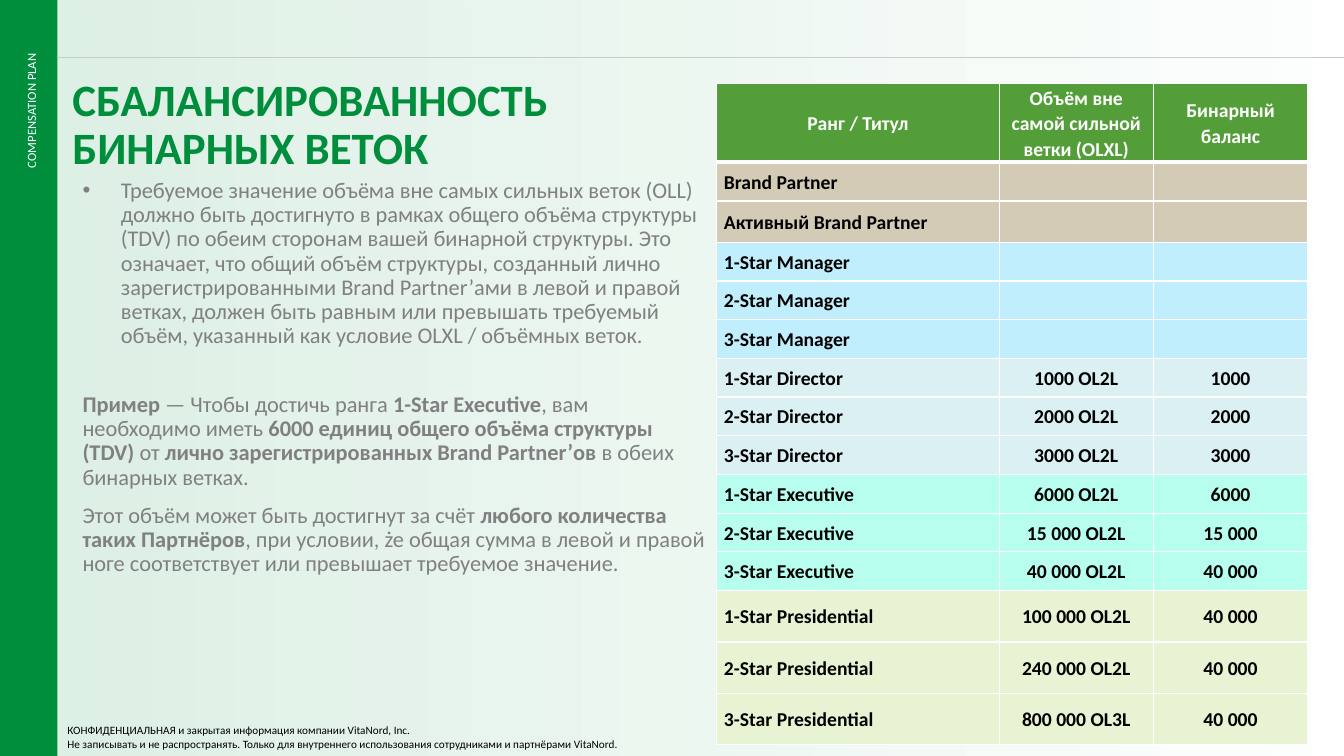
from dataclasses import dataclass

from lxml.etree import SubElement
from pptx import Presentation
from pptx.dml.color import RGBColor
from pptx.enum.shapes import MSO_CONNECTOR as Connector, MSO_SHAPE as Shape
from pptx.enum.text import MSO_ANCHOR as Anchor, PP_ALIGN as Align
from pptx.oxml import parse_xml
from pptx.oxml.ns import nsdecls, qn
from pptx.util import Inches, Pt

GREEN = RGBColor(0x00, 0x8E, 0x3D)
HEADER_GREEN = RGBColor(0x54, 0x9E, 0x39)
WHITE = RGBColor(0xFF, 0xFF, 0xFF)
BLACK = RGBColor(0x00, 0x00, 0x00)
GRAY = RGBColor(0x80, 0x80, 0x80)
RULE_GRAY = RGBColor(0xBF, 0xBF, 0xBF)
SAND = RGBColor(0xD3, 0xCB, 0xB6)
SKY = RGBColor(0xC1, 0xEE, 0xFC)
ICE = RGBColor(0xDB, 0xF0, 0xF3)
MINT = RGBColor(0xB8, 0xFE, 0xEF)
LIME = RGBColor(0xE8, 0xF3, 0xD4)

TABLE_HEIGHT, HEADER_ROW, ACTIVE_ROW, TOP_RANK_ROW = 6.56, 0.78, 0.41, 0.51
RANK_ROW = (TABLE_HEIGHT - HEADER_ROW - ACTIVE_ROW - 3 * TOP_RANK_ROW) / 10
COLUMNS = (2.8, 1.53, 1.53)


@dataclass(frozen=True)
class Rank:
    title: str
    fill: RGBColor
    volume: str = ""
    balance: str = ""
    height: float = RANK_ROW


@dataclass(frozen=True)
class Passage:
    text: str  # asterisks enclose bold words
    space_before: float = 0
    bullet: bool = False


RANKS = (
    Rank("Brand Partner", SAND),
    Rank("Активный Brand Partner", SAND, height=ACTIVE_ROW),
    *(Rank(f"{stars}-Star Manager", SKY) for stars in (1, 2, 3)),
    *(Rank(f"{stars}-Star Director", ICE, f"{stars}000 OL2L", f"{stars}000") for stars in (1, 2, 3)),
    Rank("1-Star Executive", MINT, "6000 OL2L", "6000"),
    Rank("2-Star Executive", MINT, "15 000 OL2L", "15 000"),
    Rank("3-Star Executive", MINT, "40 000 OL2L", "40 000"),
    Rank("1-Star Presidential", LIME, "100 000 OL2L", "40 000", TOP_RANK_ROW),
    Rank("2-Star Presidential", LIME, "240 000 OL2L", "40 000", TOP_RANK_ROW),
    Rank("3-Star Presidential", LIME, "800 000 OL3L", "40 000", TOP_RANK_ROW),
)

PASSAGES = (
    Passage("Требуемое значение объёма вне самых сильных веток (OLL) должно быть достигнуто в рамках "
            "общего объёма структуры (TDV) по обеим сторонам вашей бинарной структуры. Это означает, "
            "что общий объём структуры, созданный лично зарегистрированными Brand Partner’ами в левой "
            "и правой ветках, должен быть равным или превышать требуемый объём, указанный как условие "
            "OLXL / объёмных веток.", bullet=True),
    Passage("*Пример* — Чтобы достичь ранга *1-Star Executive*, вам необходимо иметь *6000 единиц "
            "общего объёма структуры (TDV) *от *лично зарегистрированных Brand Partner’ов* в обеих "
            "бинарных ветках.", 32),
    Passage("Этот объём может быть достигнут за счёт *любого количества таких Партнёров*, при условии, "
            "że общая сумма в левой и правой ноге соответствует или превышает требуемое значение.", 10),
)


def set_font(font, size: float, color: RGBColor, bold: bool = False) -> None:
    font.name, font.size, font.bold = "Calibri", Pt(size), bold
    font.color.rgb = color


def set_alpha(color_parent, percent: int) -> None:
    color = next(color_parent.iter(qn("a:srgbClr")))
    SubElement(color, qn("a:alpha")).set("val", str(percent * 1000))


def add_text(slide, left: float, top: float, width: float, height: float):
    box = slide.shapes.add_textbox(Inches(left), Inches(top), Inches(width), Inches(height))
    box.text_frame.word_wrap = True
    return box


def add_panel(slide, left: float, width: float, height: float):
    panel = slide.shapes.add_shape(Shape.RECTANGLE, Inches(left), 0, Inches(width), Inches(height))
    panel.shadow.inherit = False
    panel.line.fill.background()
    return panel


def add_rule(slide, color: RGBColor, alpha: int = 100) -> None:
    rule = slide.shapes.add_connector(
        Connector.STRAIGHT, Inches(0.56), Inches(0.57), Inches(13.33), Inches(0.57))
    rule.line.color.rgb = color
    rule.line.width = Pt(0.5)
    properties = rule._element.spPr
    set_alpha(properties, alpha)
    SubElement(properties, qn("a:effectLst"))


def add_passage(paragraph, passage: Passage) -> None:
    if passage.bullet:
        properties = paragraph._p.get_or_add_pPr()
        properties.set("marL", str(Inches(0.38)))
        properties.set("indent", str(-Inches(0.38)))
        SubElement(properties, qn("a:buFont")).set("typeface", "Arial")
        SubElement(properties, qn("a:buChar")).set("char", "•")
    paragraph.line_spacing = 0.9
    if passage.space_before:
        paragraph.space_before = Pt(passage.space_before)
    for index, words in enumerate(passage.text.split("*")):
        if words:
            run = paragraph.add_run()
            run.text = words
            set_font(run.font, 16, GRAY, bold=index % 2 == 1)


def fill_cell(cell, text: str, fill: RGBColor, color: RGBColor, align: Align,
              bottom: float = 1, top: float = 1) -> None:
    cell.fill.solid()
    cell.fill.fore_color.rgb = fill
    cell.margin_left = cell.margin_right = Inches(0.07)
    cell.margin_top = cell.margin_bottom = 0
    cell.vertical_anchor = Anchor.MIDDLE
    cell.text_frame.text = text
    paragraph = cell.text_frame.paragraphs[0]
    paragraph.alignment = align
    paragraph.line_spacing = 1.07
    paragraph.space_after = Pt(8)
    set_font(paragraph.font, 14, color, bold=True)
    for run in paragraph.runs:
        set_font(run.font, 14, color, bold=True)
    borders = (("L", 1), ("R", 1), ("T", top), ("B", bottom))
    for index, (side, width) in enumerate(borders):
        cell._tc.get_or_add_tcPr().insert(index, parse_xml(
            f'<a:ln{side} {nsdecls("a")} w="{Pt(width)}"><a:solidFill>'
            f'<a:srgbClr val="{WHITE}"/></a:solidFill></a:ln{side}>'))


def add_rank_table(slide) -> None:
    table = slide.shapes.add_table(len(RANKS) + 1, len(COLUMNS), Inches(7.11), Inches(0.83),
                                   Inches(sum(COLUMNS)), Inches(TABLE_HEIGHT)).table
    table.first_row = table.horz_banding = False
    for column, width in zip(table.columns, COLUMNS):
        column.width = Inches(width)
    table.rows[0].height = Inches(HEADER_ROW)
    headings = ("Ранг / Титул", "Объём вне самой сильной ветки (OLXL)", "Бинарный баланс")
    for column, heading in enumerate(headings):
        fill_cell(table.cell(0, column), heading, HEADER_GREEN, WHITE, Align.CENTER, bottom=3)
    for row, rank in enumerate(RANKS, 1):
        table.rows[row].height = Inches(rank.height)
        for column, text in enumerate((rank.title, rank.volume, rank.balance)):
            fill_cell(table.cell(row, column), text, rank.fill, BLACK,
                      Align.CENTER if column else Align.LEFT, top=3 if row == 1 else 1)


def main() -> None:
    deck = Presentation()
    deck.slide_width, deck.slide_height = Inches(13.33), Inches(7.5)
    slide = deck.slides.add_slide(deck.slide_layouts[6])

    # Background tint, top rule and side band
    tint = add_panel(slide, 0.57, 12.76, 7.5)
    tint.fill.gradient()
    tint.fill.gradient_angle = 0
    for stop, position, alpha in zip(tint.fill.gradient_stops, (0, 0.99), (13, 0)):
        stop.position = position
        stop.color.rgb = GREEN
        set_alpha(stop._gs, alpha)
    add_rule(slide, RULE_GRAY)
    band = add_panel(slide, 0, 0.57, 7.53)
    band.fill.solid()
    band.fill.fore_color.rgb = GREEN
    section = add_text(slide, -0.51, 1.13, 1.64, 0.25)
    section.rotation = 270
    section.text_frame.text = "COMPENSATION PLAN"
    section.text_frame.paragraphs[0].alignment = Align.RIGHT
    set_font(section.text_frame.paragraphs[0].runs[0].font, 9, WHITE)
    add_rule(slide, WHITE, 18)

    # Explanation
    explanation = add_text(slide, 0.72, 1.73, 6.39, 4.75).text_frame
    for index, passage in enumerate(PASSAGES):
        add_passage(explanation.add_paragraph() if index else explanation.paragraphs[0], passage)

    # Title
    title = add_text(slide, 0.62, 0.72, 6.48, 0.49).text_frame
    title.text = "СБАЛАНСИРОВАННОСТЬ БИНАРНЫХ ВЕТОК"
    title.paragraphs[0].line_spacing = 0.9
    set_font(title.paragraphs[0].runs[0].font, 32, GREEN, bold=True)

    add_rank_table(slide)

    # Confidentiality notice
    notice = add_text(slide, 0.57, 7.13, 6.09, 0.37).text_frame
    notice.text = ("КОНФИДЕНЦИАЛЬНАЯ и закрытая информация компании VitaNord, Inc.\n"
                   "Не записывать и не распространять. Только для внутреннего использования "
                   "сотрудниками и партнёрами VitaNord.")
    for paragraph in notice.paragraphs:
        set_font(paragraph.runs[0].font, 8, BLACK)

    deck.save("out.pptx")


if __name__ == "__main__":
    main()
